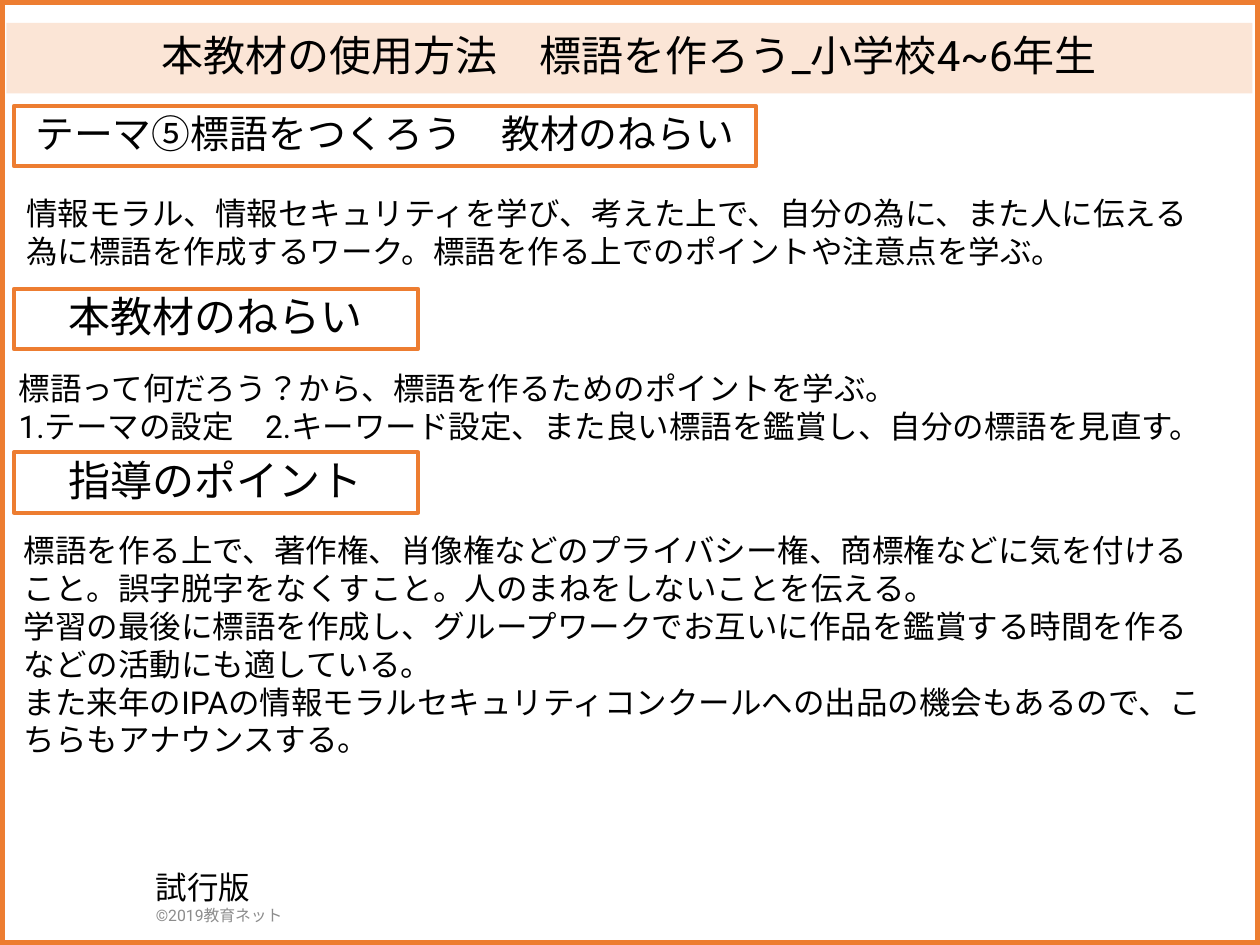
from pptx import Presentation
from pptx.dml.color import RGBColor
from pptx.enum.lang import MSO_LANGUAGE_ID
from pptx.enum.shapes import MSO_SHAPE
from pptx.enum.text import MSO_ANCHOR, MSO_AUTO_SIZE, PP_ALIGN
from pptx.oxml.ns import qn
from pptx.util import Pt

FONT = "Roboto"
ORANGE = "ED7D31"
PEACH = "FBE5D6"
BLACK = "000000"
GRAY = "8C8C8C"

# Heading text, box and size, then body lines, box and wrapping
PARTS = [
    ("テーマ⑤標語をつくろう　教材のねらい", (7.9, 60.5, 424, 34.5), 22.2,
     ["情報モラル、情報セキュリティを学び、考えた上で、自分の為に、また人に伝える",
      "為に標語を作成するワーク。標語を作る上でのポイントや注意点を学ぶ。"],
     (7.9, 107.3, 705, 51), False),
    ("本教材のねらい", (7.9, 165, 231, 34.5), 24,
     ["標語って何だろう？から、標語を作るためのポイントを学ぶ。",
      "1.テーマの設定　2.キーワード設定、また良い標語を鑑賞し、自分の標語を見直す。"],
     (3.6, 207.4, 696.2, 51), False),
    ("指導のポイント", (7.9, 258.5, 231, 34.5), 24,
     ["標語を作る上で、著作権、肖像権などのプライバシー権、商標権などに気を付けること。"
      "誤字脱字をなくすこと。人のまねをしないことを伝える。",
      "学習の最後に標語を作成し、グループワークでお互いに作品を鑑賞する時間を作る"
      "などの活動にも適している。",
      "また来年のIPAの情報モラルセキュリティコンクールへの出品の機会もあるので、"
      "こちらもアナウンスする。"],
     (6.5, 300.2, 694, 160), True),
]


def color(code):
    return RGBColor.from_string(code)


def write(para, text, size=18, fill=BLACK, align=PP_ALIGN.LEFT, space=1.0):
    para.alignment = align
    para.line_spacing = space
    para.space_before = Pt(0)
    run = para.add_run()
    run.text = text
    font = run.font
    font.size = Pt(size)
    font.name = FONT
    font.color.rgb = color(fill)
    font.language_id = MSO_LANGUAGE_ID.JAPANESE
    # The East Asian face has no public setter
    face = font._element.makeelement(qn("a:ea"), {"typeface": FONT})
    font._element.find(qn("a:latin")).addnext(face)


def outline(slide, box, width):
    """Add an unfilled orange rectangle."""
    shape = slide.shapes.add_shape(MSO_SHAPE.RECTANGLE, *map(Pt, box))
    shape.shadow.inherit = False
    shape.fill.background()
    shape.line.color.rgb = color(ORANGE)
    shape.line.width = Pt(width)
    return shape


def center(shape, text, size):
    """Write one centred line in the middle of a shape."""
    frame = shape.text_frame
    frame.word_wrap = True
    frame.auto_size = MSO_AUTO_SIZE.NONE
    frame.vertical_anchor = MSO_ANCHOR.MIDDLE
    write(frame.paragraphs[0], text, size=size, align=PP_ALIGN.CENTER, space=0.9)


def title(slide, box, text):
    shape = slide.shapes.title
    shape.left, shape.top, shape.width, shape.height = map(Pt, box)
    shape.fill.solid()
    shape.fill.fore_color.rgb = color(PEACH)
    center(shape, text, 24)


def heading(slide, box, text, size):
    center(outline(slide, box, 2.25), text, size)


def body(slide, box, lines, wrap=True):
    """Add a text box; each line is its text and its format."""
    frame = slide.shapes.add_textbox(*map(Pt, box)).text_frame
    frame.word_wrap = wrap
    frame.auto_size = MSO_AUTO_SIZE.SHAPE_TO_FIT_TEXT
    for i, (text, form) in enumerate(lines):
        para = frame.add_paragraph() if i else frame.paragraphs[0]
        write(para, text, **form)


def main():
    deck = Presentation()
    deck.slide_width, deck.slide_height = Pt(720), Pt(540)
    slide = deck.slides.add_slide(deck.slide_layouts[5])
    outline(slide, (0, 0, 720, 540), 6)
    body(slide, (82, 492.5, 208, 41),
         [("試行版", {}), ("©2019教育ネット", {"size": 9, "fill": GRAY})])
    title(slide, (3.6, 13, 712, 40.3), "本教材の使用方法　標語を作ろう_小学校4~6年生")
    for head, spot, size, lines, area, wrap in PARTS:
        heading(slide, spot, head, size)
        body(slide, area, [(line, {}) for line in lines], wrap)
    deck.save("out.pptx")


if __name__ == "__main__":
    main()
